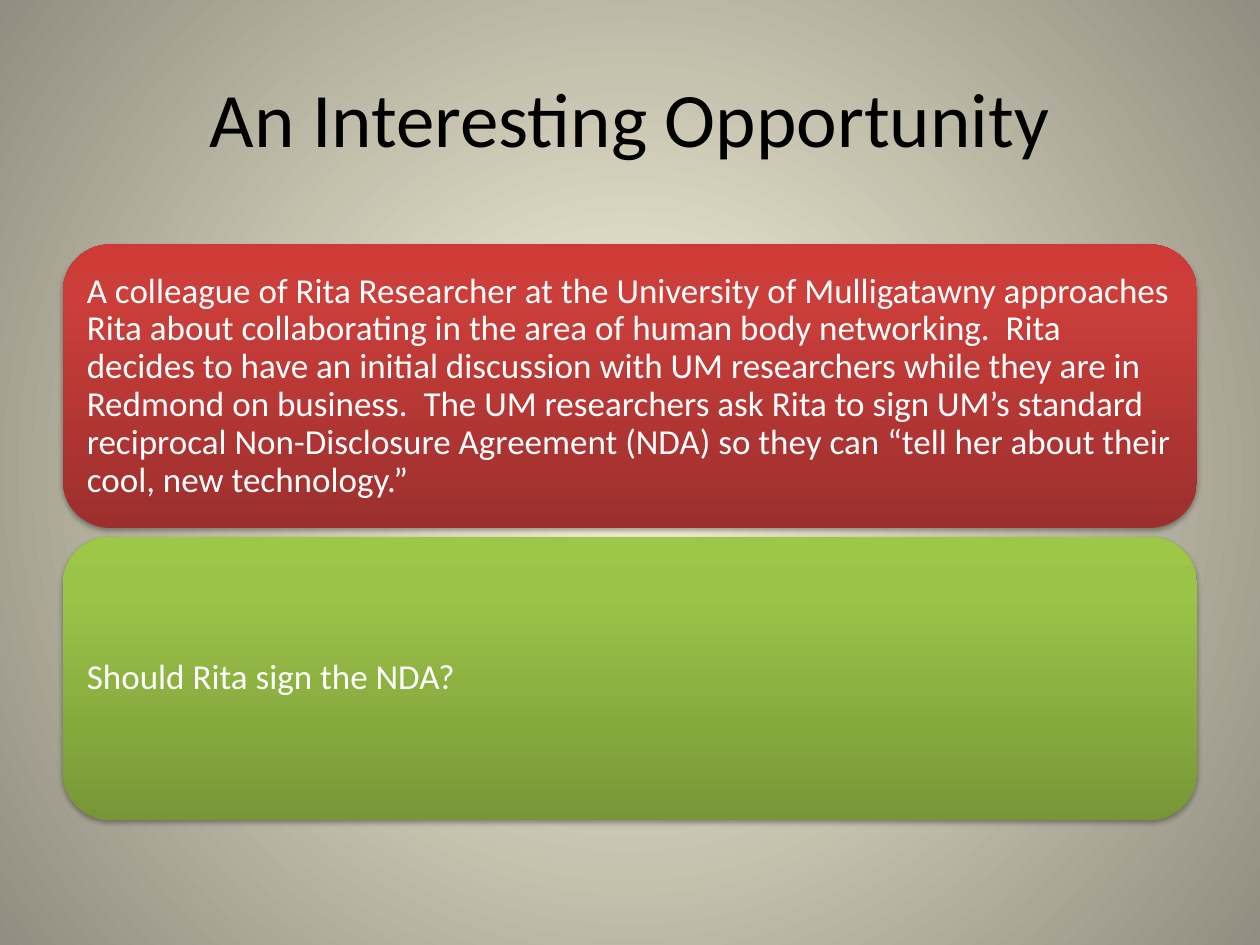
from pptx import Presentation
from pptx.dml.color import RGBColor
from pptx.enum import shapes, text
from pptx.oxml import parse_xml
from pptx.oxml.ns import nsdecls, qn
from pptx.util import Inches, Pt

BLACK = RGBColor(0x00, 0x00, 0x00)
WHITE = RGBColor(0xFF, 0xFF, 0xFF)
# Gradient stops: (percent, colour)
BACKGROUND = [(0, RGBColor(0xFC, 0xF7, 0xDD)), (100, RGBColor(0x91, 0x8E, 0x81))]
RED = [(0, RGBColor(0x9C, 0x2F, 0x2D)), (80, RGBColor(0xCB, 0x3E, 0x3A)),
       (100, RGBColor(0xCE, 0x3B, 0x37))]
GREEN = [(0, RGBColor(0x77, 0x97, 0x37)), (80, RGBColor(0x9B, 0xC3, 0x48)),
         (100, RGBColor(0x9D, 0xC7, 0x46))]

UPWARD = '<a:lin ang="16200000" scaled="0"/>'
CIRCULAR = ('<a:path path="circle"><a:fillToRect l="50000" t="50000" '
            'r="50000" b="50000"/></a:path>')

PANELS = [
    ("A colleague of Rita Researcher at the University of Mulligatawny approaches "
     "Rita about collaborating in the area of human body networking.  Rita decides "
     "to have an initial discussion with UM researchers while they are in Redmond "
     "on business.  The UM researchers ask Rita to sign UM’s standard reciprocal "
     "Non-Disclosure Agreement (NDA) so they can “tell her about their cool, new "
     "technology.”", RED),
    ("Should Rita sign the NDA?", GREEN),
]


def set_gradient(fill, owner, stops, direction):
    """Give the fill found inside the owner element these stops and direction."""
    fill.gradient()
    old = owner.find(".//" + qn("a:gradFill"))
    marks = "".join(f'<a:gs pos="{percent * 1000}"><a:srgbClr val="{colour}"/></a:gs>'
                    for percent, colour in stops)
    new = parse_xml(f'<a:gradFill {nsdecls("a")} rotWithShape="1">'
                    f'<a:gsLst>{marks}</a:gsLst>{direction}</a:gradFill>')
    old.getparent().replace(old, new)


def add_soft_shadow(shape):
    shape.shadow.inherit = False
    effects = shape.element.spPr.find(qn("a:effectLst"))
    effects.append(parse_xml(
        f'<a:outerShdw {nsdecls("a")} blurRad="{Pt(3.1)}" dist="{Pt(1.8)}" '
        'dir="5400000" rotWithShape="0"><a:srgbClr val="000000">'
        '<a:alpha val="35000"/></a:srgbClr></a:outerShdw>'))


def write(shape, words, size, colour, align):
    frame = shape.text_frame
    frame.word_wrap = True
    frame.vertical_anchor = text.MSO_ANCHOR.MIDDLE
    para = frame.paragraphs[0]
    para.text = words
    para.alignment = align
    para.font.name = "Calibri"
    para.font.size = Pt(size)
    para.font.color.rgb = colour
    return frame


def add_title(page, left, top, width, height):
    box = page.shapes.add_textbox(left, top, width, height)
    write(box, "An Interesting Opportunity", 44, BLACK, text.PP_ALIGN.CENTER)


def add_panel(page, words, stops, left, top, width, height):
    panel = page.shapes.add_shape(shapes.MSO_SHAPE.ROUNDED_RECTANGLE,
                                  left, top, width, height)
    set_gradient(panel.fill, panel.element, stops, UPWARD)
    panel.line.fill.background()
    add_soft_shadow(panel)
    frame = write(panel, words, 20, WHITE, text.PP_ALIGN.LEFT)
    frame.paragraphs[0].line_spacing = 0.9
    frame.margin_left = frame.margin_right = Inches(0.08)
    frame.margin_top = frame.margin_bottom = Inches(0.08)


def add_panels(page, left, top, width, height, gap):
    """Stack the panels in equal rows within the box."""
    row = (height - gap * (len(PANELS) - 1)) // len(PANELS)
    for index, (words, stops) in enumerate(PANELS):
        add_panel(page, words, stops, left, top + index * (row + gap), width, row)


def main():
    deck = Presentation()
    deck.slide_width, deck.slide_height = Inches(10), Inches(7.5)
    page = deck.slides.add_slide(deck.slide_layouts[6])

    # Background
    set_gradient(page.background.fill, page.element, BACKGROUND, CIRCULAR)
    # Title
    add_title(page, Inches(0.5), Inches(0.3), Inches(9), Inches(1.25))
    # Scenario and question
    add_panels(page, Inches(0.5), Inches(1.94), Inches(9), Inches(4.57), Inches(0.07))

    deck.save("out.pptx")


if __name__ == "__main__":
    main()
